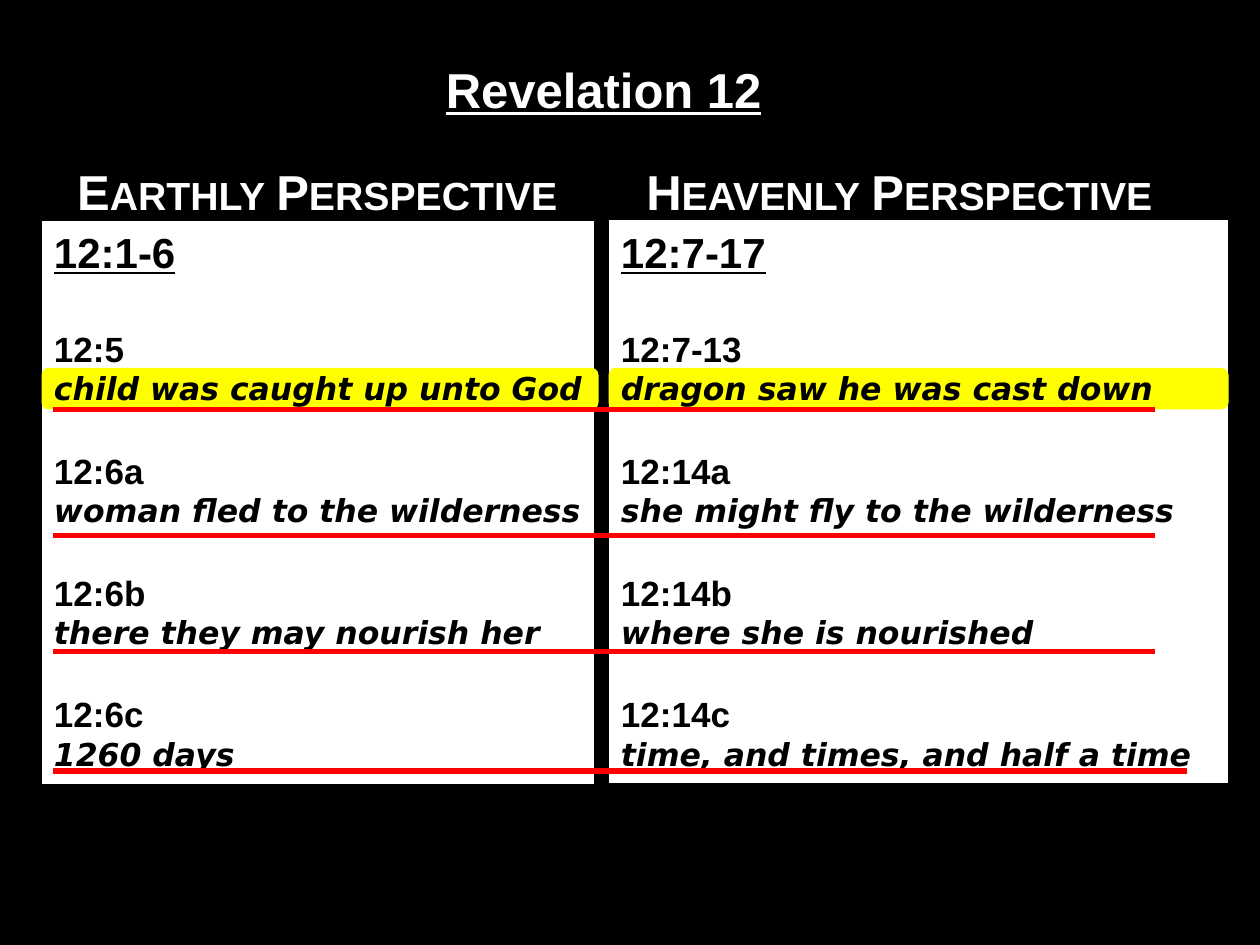
from dataclasses import dataclass

from lxml import etree
from pptx import Presentation
from pptx.dml.color import RGBColor
from pptx.enum import shapes, text
from pptx.oxml.ns import qn
from pptx.util import Inches, Pt


@dataclass(frozen=True)
class Theme:
    black: str = "000000"
    white: str = "FFFFFF"
    yellow: str = "FFFF00"
    red: str = "FF0000"
    heading: float = 28
    passage: float = 24
    verse: float = 20
    quote: float = 18
    passage_gap: float = 28.8
    verse_gap: float = 24
    font: str = "Arial"
    quote_font: str = "DejaVu Sans"


@dataclass(frozen=True)
class Column:
    title: str
    title_left: float
    left: float
    top: float
    panel_width: float
    width: float
    passage: str
    verses: tuple[tuple[str, str], ...]


@dataclass(frozen=True)
class Rule:
    y: float
    right: float = 9.17


T = Theme()
RULE_LEFT = 0.42
COLUMNS = (
    Column("Heavenly Perspective", 4.95, 4.83, 1.74, 4.92, 4.92, "12:7-17", (
        ("12:7-13", "dragon saw he was cast down"),
        ("12:14a", "she might fly to the wilderness"),
        ("12:14b", "where she is nourished"),
        ("12:14c", "time, and times, and half a time"),
    )),
    Column("Earthly Perspective", 0.33, 0.33, 1.75, 4.39, 4.42, "12:1-6", (
        ("12:5", "child was caught up unto God"),
        ("12:6a", "woman fled to the wilderness"),
        ("12:6b", "there they may nourish her"),
        ("12:6c", "1260 days"),
    )),
)
RULES = (Rule(3.25), Rule(4.25), Rule(5.17), Rule(6.12, 9.42))


def rgb(color: str) -> RGBColor:
    return RGBColor.from_string(color)


def add_block(s, kind, x: float, y: float, w: float, h: float, fill: str, line: str | None = None):
    sp = s.shapes.add_shape(kind, Inches(x), Inches(y), Inches(w), Inches(h))
    sp.shadow.inherit = False
    sp.fill.solid()
    sp.fill.fore_color.rgb = rgb(fill)
    if line:
        sp.line.color.rgb = rgb(line)
        sp.line.width = Pt(0.75)
    else:
        sp.line.fill.background()


def add_frame(s, x: float, y: float, w: float, h: float):
    tf = s.shapes.add_textbox(Inches(x), Inches(y), Inches(w), Inches(h)).text_frame
    tf.word_wrap = True
    return tf


def write(tf, words: str, *, size: float, color: str = T.black, font: str = T.font,
          italic: bool = False, underline: bool = False, small_caps: bool = False,
          centered: bool = False, before: float = 0):
    p = tf.paragraphs[0] if not tf.text else tf.add_paragraph()
    p.alignment = text.PP_ALIGN.CENTER if centered else text.PP_ALIGN.LEFT
    p.space_before = Pt(before)
    r = p.add_run()
    r.text = words
    f = r.font
    f.name, f.size, f.bold = font, Pt(size), True
    f.italic, f.underline = italic, underline
    f.color.rgb = rgb(color)
    if small_caps:
        r._r.get_or_add_rPr().set("cap", "small")


def add_panel(s, c: Column):
    add_block(s, shapes.MSO_SHAPE.RECTANGLE, c.left, c.top, c.panel_width, 4.48, T.white, T.black)
    add_block(s, shapes.MSO_SHAPE.ROUNDED_RECTANGLE, c.left, 2.92, c.width, 0.33, T.yellow)


def add_column_text(s, c: Column):
    tf = add_frame(s, c.left, 1.75, c.width, 4.43)
    write(tf, c.passage, size=T.passage, underline=True)
    for i, (verse, quote) in enumerate(c.verses):
        write(tf, verse, size=T.verse, before=T.verse_gap if i else T.passage_gap)
        write(tf, quote, size=T.quote, font=T.quote_font, italic=True)
    tf = add_frame(s, c.title_left, 1.23, 4.38, 0.57)
    write(tf, c.title, size=T.heading, color=T.white, small_caps=True, centered=True)


def add_rule(s, rule: Rule):
    y = Inches(rule.y)
    cx = s.shapes.add_connector(shapes.MSO_CONNECTOR.STRAIGHT, Inches(RULE_LEFT), y,
                                Inches(rule.right), y)
    cx.line.color.rgb = rgb(T.red)
    cx.line.width = Pt(3)
    etree.SubElement(cx._element.spPr, qn("a:effectLst"))


def main():
    prs = Presentation()
    prs.slide_width, prs.slide_height = Inches(10), Inches(7.5)
    s = prs.slides.add_slide(prs.slide_layouts[6])
    s.background.fill.solid()
    s.background.fill.fore_color.rgb = rgb(T.black)
    for c in COLUMNS:
        add_panel(s, c)
    for c in COLUMNS:
        add_column_text(s, c)
    write(add_frame(s, 1.58, 0.42, 6.42, 0.57), "Revelation 12", size=T.heading,
          color=T.white, underline=True, centered=True)
    for rule in RULES:
        add_rule(s, rule)
    prs.save("out.pptx")


if __name__ == "__main__":
    main()
